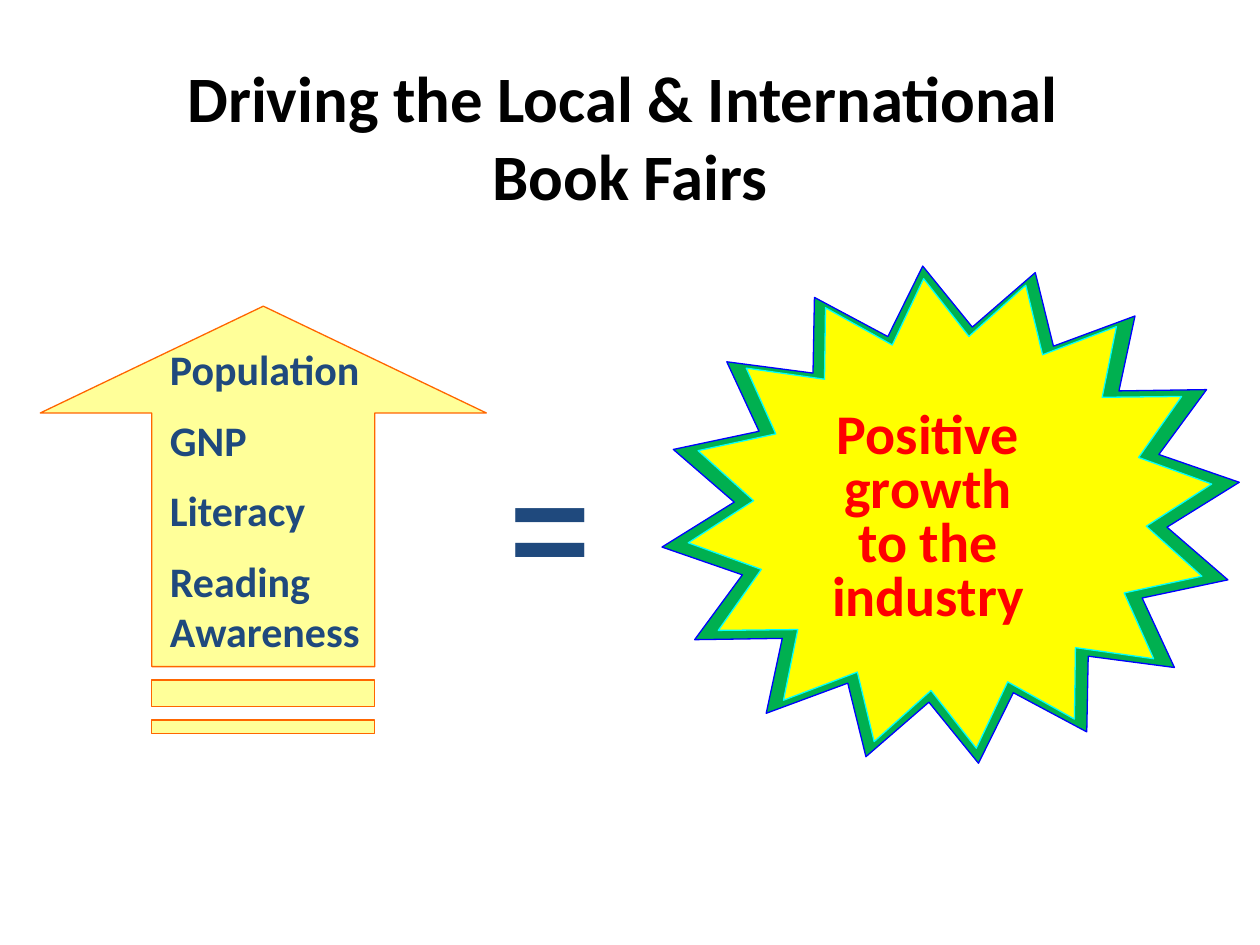
from pptx import Presentation
from pptx.dml.color import RGBColor
from pptx.enum import shapes, text
from pptx.util import Inches, Pt

BLACK = RGBColor(0x00, 0x00, 0x00)
NAVY = RGBColor(0x1F, 0x49, 0x7D)
RED = RGBColor(0xFF, 0x00, 0x00)
CREAM = RGBColor(0xFF, 0xFF, 0x99)
ORANGE = RGBColor(0xFF, 0x66, 0x00)
GREEN = RGBColor(0x00, 0xB0, 0x50)
BLUE = RGBColor(0x00, 0x00, 0xFF)
YELLOW = RGBColor(0xFF, 0xFF, 0x00)
CYAN = RGBColor(0x00, 0xFF, 0xFF)

CENTER = text.PP_ALIGN.CENTER
MIDDLE = text.MSO_ANCHOR.MIDDLE
GROW = text.MSO_AUTO_SIZE.SHAPE_TO_FIT_TEXT


def set_all(target, values):
    for name, value in values.items():
        setattr(target, name, value)


def add_text(page, bounds, lines, size, color, font="Calibri", gap=0, frame_format=None, **para_format):
    """Add a bold text box; gap is the space in points between paragraphs."""
    box = page.shapes.add_textbox(*map(Inches, bounds))
    frame = box.text_frame
    set_all(frame, {"word_wrap": True, **(frame_format or {"auto_size": GROW})})
    for index, line in enumerate(lines):
        para = frame.paragraphs[0] if index == 0 else frame.add_paragraph()
        para.text = line
        set_all(para, para_format)
        if index:
            para.space_before = Pt(gap)
        for span in para.runs:
            set_all(span.font, {"name": font, "size": Pt(size), "bold": True})
            span.font.color.rgb = color


def add_figure(page, kind, bounds, rotation, adjustments, fill, line):
    figure = page.shapes.add_shape(kind, *map(Inches, bounds))
    set_all(figure, {"rotation": rotation})
    figure.shadow.inherit = False
    for index, value in enumerate(adjustments):
        figure.adjustments[index] = value
    figure.fill.solid()
    figure.fill.fore_color.rgb = fill
    figure.line.color.rgb = line
    figure.line.width = Pt(0.75)


def add_title(page, left, top, width, height):
    add_text(page, (left, top, width, height),
             ["Driving the Local & International \vBook Fairs"], 37, BLACK,
             frame_format={"vertical_anchor": MIDDLE}, alignment=CENTER)


def add_growth_arrow(page, left, top, width, height):
    # The arrow points right before its quarter turn, so its sides swap.
    turned = (left + (width - height) / 2, top + (height - width) / 2, height, width)
    add_figure(page, shapes.MSO_SHAPE.STRIPED_RIGHT_ARROW, turned, 270,
               (0.5, 0.25), CREAM, ORANGE)
    add_text(page, (left + 0.93, top + 0.25, 2.05, 2.69),
             ["Population", "GNP", "Literacy", "Reading Awareness"],
             24, NAVY, gap=11.5)


def add_result_star(page, left, top, width, height):
    star = shapes.MSO_SHAPE.STAR_16_POINT
    add_figure(page, star, (left, top, width, height), 353.6, (0.375,), GREEN, BLUE)
    add_figure(page, star, (left + 0.21, top + 0.1, width - 0.43, height - 0.22),
               353.6, (0.375,), YELLOW, CYAN)
    add_text(page, (left + 0.95, top + 1.12, 2.35, 2.34),
             ["Positive growth\vto the industry"], 32, RED,
             alignment=CENTER, line_spacing=0.8)


def main():
    deck = Presentation()
    set_all(deck, {"slide_width": Inches(10), "slide_height": Inches(7.5)})
    page = deck.slides.add_slide(deck.slide_layouts[6])
    add_title(page, 0.5, 0.45, 9, 1.25)
    add_growth_arrow(page, 0.32, 2.43, 3.54, 3.39)
    add_result_star(page, 5.24, 2.1, 4.61, 3.97)
    add_text(page, (3.9, 3.51, 0.94, 1.38), ["="], 77, NAVY,
             font="Noto Sans CJK KR", alignment=CENTER)
    deck.save("out.pptx")


if __name__ == "__main__":
    main()
